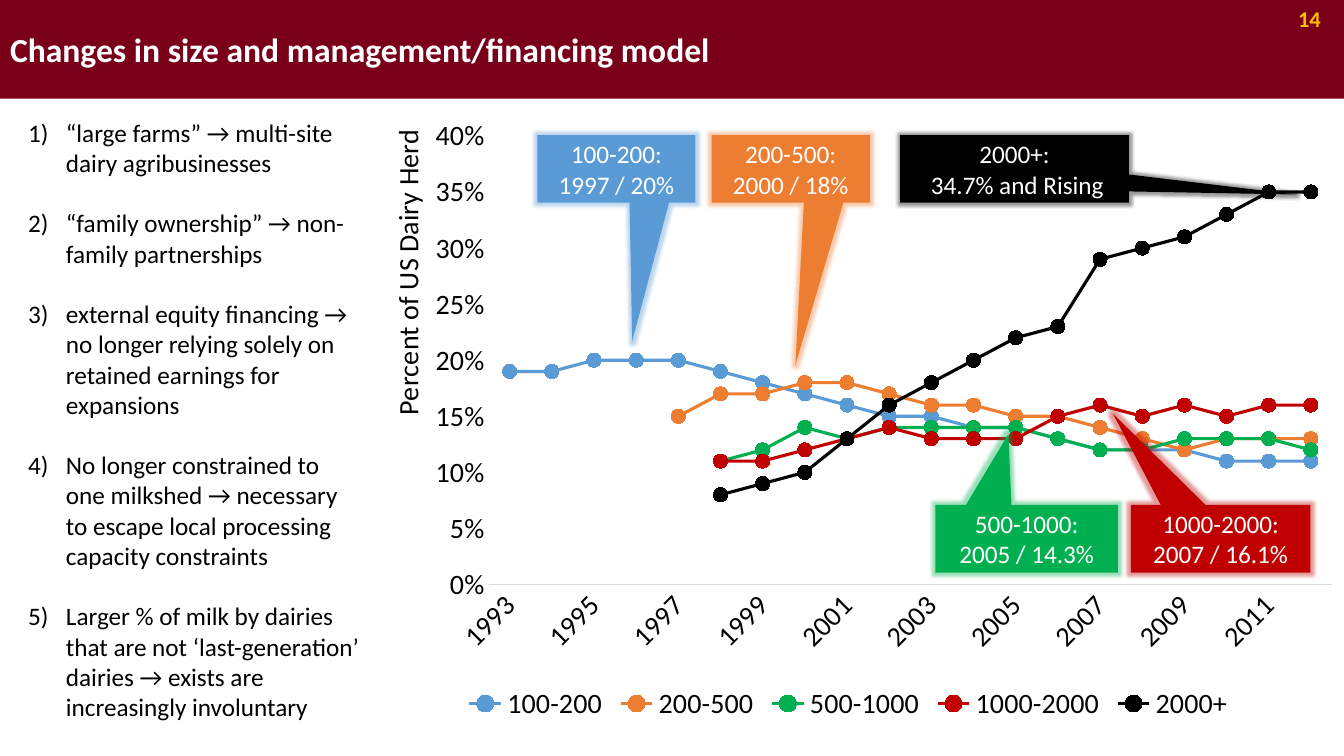
import pptx
import pptx.chart.data
import pptx.dml.color
import pptx.enum.chart
import pptx.enum.shapes
import pptx.enum.text
import pptx.oxml
import pptx.oxml.ns
import pptx.util
from lxml import etree

Pt = pptx.util.Pt
ALIGN = pptx.enum.text.PP_ALIGN
MIDDLE = pptx.enum.text.MSO_ANCHOR.MIDDLE
TOP = pptx.enum.text.MSO_ANCHOR.TOP
FONT = "Calibri"
MAROON, WHITE, BLACK, GOLD = "7A0019", "FFFFFF", "000000", "FFC000"

TITLE = "Changes in size and management/financing model"
PAGE = "14"
POINTS = [
    "“large farms” → multi-site dairy agribusinesses",
    "“family ownership” → non-family partnerships",
    "external equity financing → no longer relying solely on retained earnings for expansions",
    "No longer constrained to one milkshed → necessary to escape local processing capacity constraints",
    "Larger % of milk by dairies that are not ‘last-generation’ dairies → exists are increasingly involuntary",
]
FIRST_YEAR, LAST_YEAR = 1993, 2012
HERDS = {
    "100-200": ("5B9BD5", 1993, [19, 19, 20, 20, 20, 19, 18, 17, 16, 15, 15, 14, 14, 13, 12, 12, 12, 11, 11, 11]),
    "200-500": ("ED7D31", 1997, [15, 17, 17, 18, 18, 17, 16, 16, 15, 15, 14, 13, 12, 13, 13, 13]),
    "500-1000": ("00B050", 1998, [11, 12, 14, 13, 14, 14, 14, 14, 13, 12, 12, 13, 13, 13, 12]),
    "1000-2000": ("C00000", 1998, [11, 11, 12, 13, 14, 13, 13, 13, 15, 16, 15, 16, 15, 16, 16]),
    "2000+": (BLACK, 1998, [8, 9, 10, 13, 16, 18, 20, 22, 23, 29, 30, 31, 33, 35, 35]),
}
UPPER, LOWER, CALLOUT_HEIGHT = 96.5, 360.7, 48.3
CALLOUTS = [
    ("1000-2000", "2007 / 16.1%", 807.8, LOWER, 128.2, (-0.6, -1.85)),
    ("2000+", " 34.7% and Rising", 643, UPPER, 163.4, (1.23, 0.38)),
    ("500-1000", "2005 / 14.3%", 668.2, LOWER, 130.3, (-0.1, -1.55)),
    ("100-200", "1997 / 20%", 383.8, UPPER, 113, (0.1, 2.55)),
    ("200-500", "2000 / 18%", 508.3, UPPER, 113, (0.03, 2.9)),
]


def color(value):
    return pptx.dml.color.RGBColor.from_string(value)


def paint(fill, value):
    fill.solid()
    fill.fore_color.rgb = color(value)


def style_font(font, size, value, bold=False):
    font.name, font.size, font.bold = FONT, Pt(size), bold
    font.color.rgb = color(value)


def write_text(shape, lines, size=18, value=BLACK, bold=False, align=ALIGN.LEFT, anchor=MIDDLE, gap=0):
    frame = shape.text_frame
    frame.word_wrap = True
    frame.vertical_anchor = anchor
    for index, line in enumerate(lines):
        paragraph = frame.paragraphs[0] if index == 0 else frame.add_paragraph()
        paragraph.alignment = align
        paragraph.space_before = Pt(gap if index else 0)
        run = paragraph.add_run()
        run.text = line
        style_font(run.font, size, value, bold)


def place(shape, left, top, width, height):
    shape.left, shape.top, shape.width, shape.height = Pt(left), Pt(top), Pt(width), Pt(height)


def add_child(parent, tag, **attributes):
    child = etree.SubElement(parent, pptx.oxml.ns.qn(tag))
    for name, value in attributes.items():
        child.set(name, str(value))
    return child


def set_layout(parent, **values):
    layout = parent.find(pptx.oxml.ns.qn("c:layout"))
    if layout is None:
        layout = add_child(parent, "c:layout")
        parent.insert(0, layout)
    manual = add_child(layout, "c:manualLayout")
    for name, value in values.items():
        add_child(manual, "c:" + name, val=value)


def add_herd_chart(slide):
    years = range(FIRST_YEAR, LAST_YEAR + 1)
    data = pptx.chart.data.CategoryChartData(number_format="0%")
    data.categories = [str(year) for year in years]
    for name, (_, start, shares) in HERDS.items():
        data.add_series(name, [None] * (start - FIRST_YEAR) + [share / 100 for share in shares])
    chart = slide.shapes.add_chart(
        pptx.enum.chart.XL_CHART_TYPE.LINE_MARKERS, Pt(252), Pt(80), Pt(708), Pt(439), data
    ).chart
    style_font(chart.font, 20, BLACK)
    chart.has_title = False
    chart.has_legend = True
    chart.legend.position = pptx.enum.chart.XL_LEGEND_POSITION.BOTTOM
    chart.legend.include_in_layout = False
    style_font(chart.legend.font, 20, BLACK)
    chart.plots[0].vary_by_categories = False
    for series in chart.plots[0].series:
        shade = HERDS[series.name][0]
        series.smooth = False
        series.format.line.width = Pt(2.25)
        series.format.line.color.rgb = color(shade)
        series.marker.style = pptx.enum.chart.XL_MARKER_STYLE.CIRCLE
        series.marker.size = 10
        paint(series.marker.format.fill, shade)
        series.marker.format.line.fill.background()

    for axis in (chart.category_axis, chart.value_axis):
        axis.has_major_gridlines = False
        axis.major_tick_mark = axis.minor_tick_mark = pptx.enum.chart.XL_TICK_MARK.NONE
        style_font(axis.tick_labels.font, 20, BLACK)
    year_axis, share_axis = chart.category_axis, chart.value_axis
    year_axis.format.line.color.rgb = color("D9D9D9")
    year_axis.format.line.width = Pt(0.75)
    year_xml = year_axis.tick_labels.font._element.getparent().getparent().getparent()
    year_xml.find(pptx.oxml.ns.qn("a:bodyPr")).set("rot", "-2700000")
    axis_xml = year_xml.getparent()
    skip = add_child(axis_xml, "c:tickLblSkip", val=2)
    axis_xml.find(pptx.oxml.ns.qn("c:noMultiLvlLbl")).addprevious(skip)

    share_axis.minimum_scale, share_axis.maximum_scale, share_axis.major_unit = 0, 0.4, 0.05
    share_axis.tick_labels.number_format = "0%"
    share_axis.tick_labels.number_format_is_linked = False
    share_axis.format.line.fill.background()
    frame = share_axis.axis_title.text_frame
    run = frame.paragraphs[0].add_run()
    run.text = "Percent of US Dairy Herd"
    style_font(run.font, 20, BLACK)
    frame._txBody.find(pptx.oxml.ns.qn("a:bodyPr")).set("rot", "-5400000")
    set_layout(share_axis.axis_title._element, xMode="edge", yMode="edge", x=0.03, y=0.02)
    plot_area = axis_xml.getparent()
    set_layout(plot_area, layoutTarget="inner", xMode="edge", yMode="edge",
               x=0.137, y=0.039, w=0.851, h=0.73)


def add_callout(slide, herd, peak, left, top, width, tip):
    shade = HERDS[herd][0]
    shape = slide.shapes.add_shape(
        pptx.enum.shapes.MSO_SHAPE.RECTANGULAR_CALLOUT, Pt(left), Pt(top), Pt(width), Pt(CALLOUT_HEIGHT)
    )
    shape.adjustments[0], shape.adjustments[1] = tip
    paint(shape.fill, shade)
    shape.line.fill.background()
    shape.shadow.inherit = False
    effects = shape._element.spPr.find(pptx.oxml.ns.qn("a:effectLst"))
    glow_color = add_child(add_child(effects, "a:glow", rad=Pt(5)), "a:srgbClr", val=shade)
    add_child(glow_color, "a:alpha", val=40000)
    write_text(shape, [herd + ":", peak], value=WHITE, align=ALIGN.CENTER)


def main():
    presentation = pptx.Presentation()
    presentation.slide_width, presentation.slide_height = Pt(960), Pt(540)
    slide = presentation.slides.add_slide(presentation.slide_layouts[5])

    title = slide.shapes.title
    place(title, 0, 0, 960, 70.5)
    paint(title.fill, MAROON)
    write_text(title, [TITLE], size=24, value=WHITE, bold=True)

    page = slide.shapes.add_textbox(Pt(905.8), Pt(2.2), Pt(44.6), Pt(22.3))
    paint(page.fill, MAROON)
    write_text(page, [PAGE], size=16, value=GOLD, bold=True, align=ALIGN.RIGHT)

    add_herd_chart(slide)
    for callout in CALLOUTS:
        add_callout(slide, *callout)

    points = slide.shapes.add_textbox(Pt(13), Pt(80), Pt(250.6), Pt(465))
    write_text(points, POINTS, anchor=TOP, gap=21.6)
    for paragraph in points.text_frame.paragraphs:
        properties = paragraph._p.get_or_add_pPr()
        properties.set("marL", str(Pt(27)))
        properties.set("indent", str(-Pt(27)))
        add_child(properties, "a:buFont", typeface="+mj-lt")
        add_child(properties, "a:buAutoNum", type="arabicParenR")

    presentation.save("out.pptx")


if __name__ == "__main__":
    main()
